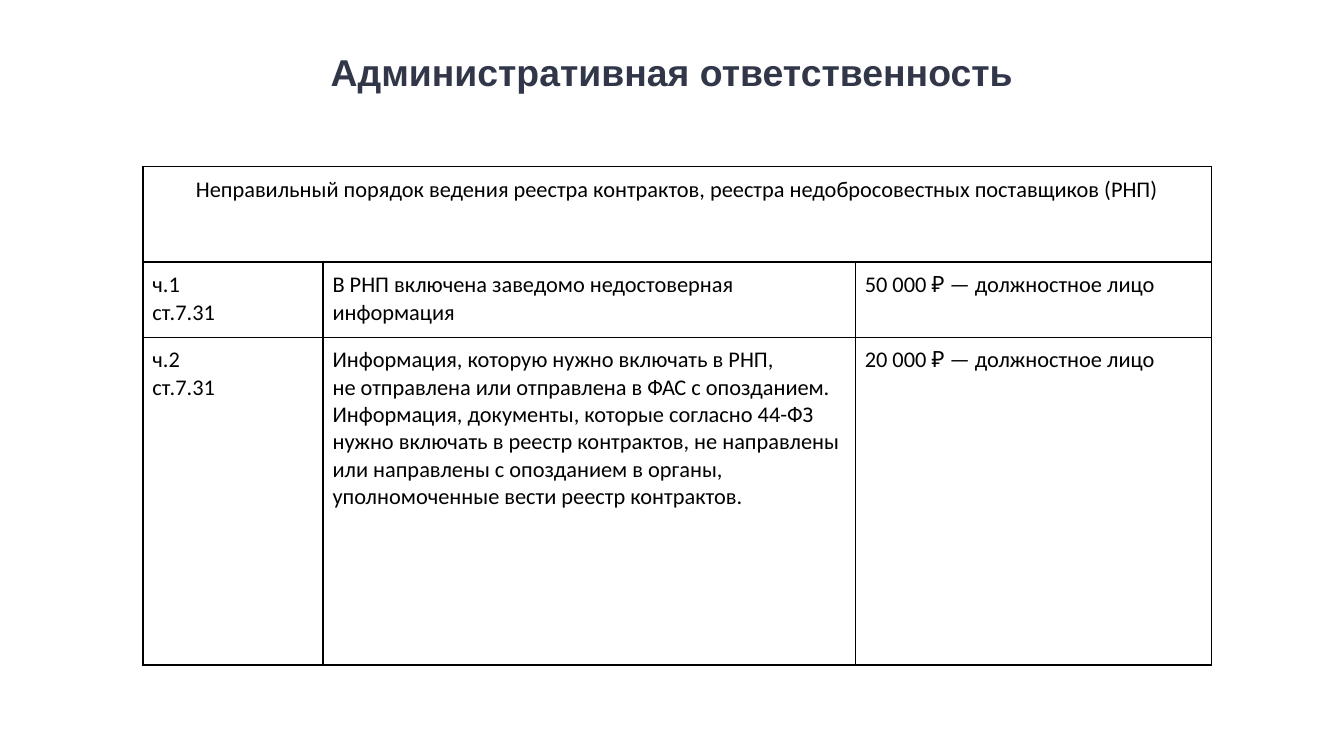
from copy import deepcopy

from lxml.etree import SubElement
from pptx import Presentation
from pptx.dml.color import RGBColor
from pptx.enum.text import MSO_ANCHOR as Anchor, PP_ALIGN as Align
from pptx.oxml.ns import qn
from pptx.util import Pt

PX = 4572
INK = "000000"
NAVY = "323649"
TIE = "~"
HARD_SPACE = chr(160)
HEADING = "Неправильный порядок ведения реестра контрактов, реестра недобросовестных поставщиков (РНП)"
OFFENCES = [
    ("ч.1\nст.7.31",
     "В~РНП включена заведомо недостоверная информация",
     "50~000~₽ — должностное лицо"),
    ("ч.2\nст.7.31",
     "Информация, которую нужно включать в~РНП, не~отправлена или~отправлена в~ФАС с~опозданием.\n"
     "Информация, документы, которые согласно 44-ФЗ нужно включать в~реестр контрактов, "
     "не~направлены или~направлены с~опозданием в~органы, уполномоченные вести реестр контрактов.",
     "20~000~₽ — должностное лицо"),
]


def px(*lengths):
    return [length * PX for length in lengths]


def color(value):
    return RGBColor.from_string(value)


def write(frame, text, font="Calibri", size=12, ink=INK, bold=False, align=Align.LEFT):
    frame.word_wrap = True
    para = frame.paragraphs[0]
    para.alignment = align
    para.text = text.replace(TIE, HARD_SPACE)
    for span in para.runs:
        span.font.name = font
        span.font.size = Pt(size)
        span.font.bold = bold
        span.font.color.rgb = color(ink)
    for line_break in para._p.findall(qn("a:br")):
        line_break.append(deepcopy(para.runs[0]._r.rPr))


def outline(cell, ink=INK, width=1):
    properties = cell._tc.get_or_add_tcPr()
    for side in ("a:lnL", "a:lnR", "a:lnT", "a:lnB"):
        line = SubElement(properties, qn(side), w=str(Pt(width)))
        fill = SubElement(line, qn("a:solidFill"))
        SubElement(fill, qn("a:srgbClr"), val=ink)


def add_title(page, box, text):
    frame = page.shapes.add_textbox(*px(*box)).text_frame
    frame.vertical_anchor = Anchor.MIDDLE
    write(frame, text, font="Arial", size=20, ink=NAVY, bold=True, align=Align.CENTER)


def add_penalties(page, box, widths, heights):
    table = page.shapes.add_table(len(heights), len(widths), *px(*box)).table
    table.first_row = table.horz_banding = False
    for column, width in zip(table.columns, px(*widths)):
        column.width = width
    for row, height in zip(table.rows, px(*heights)):
        row.height = height
    for cell in table.iter_cells():
        cell.margin_left = cell.margin_right = 14 * PX
        cell.margin_top = cell.margin_bottom = 14 * PX
        outline(cell)
        cell.fill.background()
    table.cell(0, 0).merge(table.cell(0, len(widths) - 1))
    write(table.cell(0, 0).text_frame, HEADING, align=Align.CENTER)
    for row, offence in enumerate(OFFENCES, 1):
        for column, text in enumerate(offence):
            write(table.cell(row, column).text_frame, text)


def main():
    deck = Presentation()
    deck.slide_width, deck.slide_height = px(2000, 1125)
    page = deck.slides.add_slide(deck.slide_layouts[6])
    add_title(page, (100, 45, 1800, 124), "Административная ответственность")
    add_penalties(page, (213, 248, 1590, 742), (268, 792, 530), (142, 112, 488))
    deck.save("out.pptx")


if __name__ == "__main__":
    main()
